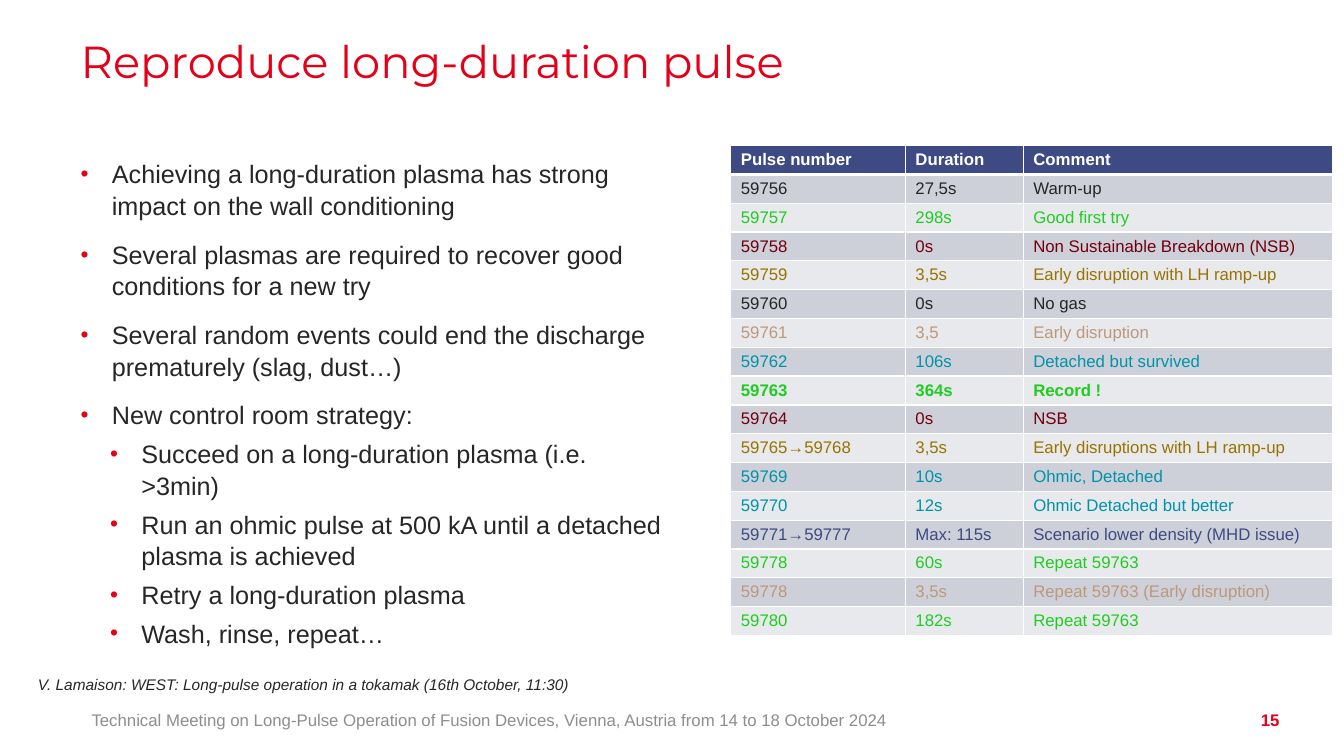
from typing import NamedTuple

import lxml.etree
import pptx
import pptx.dml.color
import pptx.enum.text
import pptx.oxml.ns
import pptx.util

Pt = pptx.util.Pt
Align = pptx.enum.text.PP_ALIGN
Anchor = pptx.enum.text.MSO_ANCHOR
Fit = pptx.enum.text.MSO_AUTO_SIZE
qn = pptx.oxml.ns.qn

RED, DARK, GREY, WHITE = "E50019", "262626", "8E8E8E", "FFFFFF"
NAVY, GREEN, WINE = "3E4A83", "1FCD20", "72000C"
GOLD, TAN, TEAL = "987300", "BD987A", "0093A7"
BANDS = ("CED0D9", "E8E9ED")


class Item(NamedTuple):
    text: str
    level: int = 0


class Pulse(NamedTuple):
    number: str
    time: str
    note: str
    color: str
    bold: bool = False


class Label(NamedTuple):
    text: str
    left: float
    top: float
    width: float
    height: float
    size: float
    color: str
    align: Align = Align.LEFT
    anchor: Anchor = Anchor.MIDDLE
    bold: bool = False
    italic: bool = False
    wrap: bool = True


ITEMS = [
    Item("Achieving a long-duration plasma has strong impact on the wall conditioning"),
    Item("Several plasmas are required to recover good conditions for a new try"),
    Item("Several random events could end the discharge prematurely (slag, dust…)"),
    Item("New control room strategy:"),
    Item("Succeed on a long-duration plasma (i.e. >3min)", 1),
    Item("Run an ohmic pulse at 500 kA until a detached plasma is achieved", 1),
    Item("Retry a long-duration plasma", 1),
    Item("Wash, rinse, repeat…", 1),
]

HEAD = Pulse("Pulse number", "Duration", "Comment", WHITE, True)
PULSES = [
    Pulse("59756", "27,5s", "Warm-up", DARK),
    Pulse("59757", "298s", "Good first try", GREEN),
    Pulse("59758", "0s", "Non Sustainable Breakdown (NSB)", WINE),
    Pulse("59759", "3,5s", "Early disruption with LH ramp-up", GOLD),
    Pulse("59760", "0s", "No gas", DARK),
    Pulse("59761", "3,5", "Early disruption", TAN),
    Pulse("59762", "106s", "Detached but survived", TEAL),
    Pulse("59763", "364s", "Record !", GREEN, True),
    Pulse("59764", "0s", "NSB", WINE),
    Pulse("59765→59768", "3,5s", "Early disruptions with LH ramp-up", GOLD),
    Pulse("59769", "10s", "Ohmic, Detached", TEAL),
    Pulse("59770", "12s", "Ohmic Detached but better", TEAL),
    Pulse("59771→59777", "Max: 115s", "Scenario lower density (MHD issue)", NAVY),
    Pulse("59778", "60s", "Repeat 59763", GREEN),
    Pulse("59778", "3,5s", "Repeat 59763 (Early disruption)", TAN),
    Pulse("59780", "182s", "Repeat 59763", GREEN),
]
COLS = (124.7, 84.2, 221)
ROW = 20.6

LABELS = [
    Label("Technical Meeting on Long-Pulse Operation of Fusion Devices, "
          "Vienna, Austria from 14 to 18 October 2024",
          58.3, 499.7, 696, 28.8, 12, GREY),
    Label("15", 866, 499.7, 55, 28.8, 12, RED, align=Align.RIGHT, bold=True),
    Label("V. Lamaison: WEST: Long-pulse operation in a tokamak (16th October, 11:30)",
          20, 479, 398, 21, 11, DARK, anchor=Anchor.TOP, italic=True, wrap=False),
]


def rgb(color: str) -> pptx.dml.color.RGBColor:
    return pptx.dml.color.RGBColor.from_string(color)


def add_run(para, text: str, size: float, color: str, bold: bool = False,
            italic: bool = False, face: str = "Arial") -> None:
    run = para.add_run()
    run.text = text
    font = run.font
    font.name, font.size = face, Pt(size)
    font.bold, font.italic = bold, italic
    font.color.rgb = rgb(color)


def place(shape, left: float, top: float, width: float, height: float) -> None:
    """Move a placeholder and clear its side insets."""
    shape.left, shape.top = Pt(left), Pt(top)
    shape.width, shape.height = Pt(width), Pt(height)
    frame = shape.text_frame
    frame.margin_left = frame.margin_right = 0
    frame.margin_top = frame.margin_bottom = Pt(3.6)
    frame.vertical_anchor = Anchor.TOP
    frame.auto_size = Fit.NONE
    frame.word_wrap = True


def add_bullet(para, left: float) -> None:
    props = para._p.get_or_add_pPr()
    props.set("marL", str(Pt(left)))
    props.set("indent", str(Pt(-22.3)))
    tint = lxml.etree.SubElement(props, qn("a:buClr"))
    lxml.etree.SubElement(tint, qn("a:srgbClr")).set("val", RED)
    lxml.etree.SubElement(props, qn("a:buSzPct")).set("val", "90000")
    lxml.etree.SubElement(props, qn("a:buFont")).set("typeface", "Arial")
    lxml.etree.SubElement(props, qn("a:buChar")).set("char", "•")


def add_list(shape, items: list[Item]) -> None:
    frame = shape.text_frame
    for i, item in enumerate(items):
        para = frame.add_paragraph() if i else frame.paragraphs[0]
        para.level = item.level
        add_bullet(para, 43.4 if item.level else 22.3)
        para.alignment = Align.LEFT
        para.line_spacing = 1.05
        para.space_before = Pt((5 if item.level else 12) if i else 0)
        para.space_after = Pt(0)
        add_run(para, item.text, 18, DARK)


def add_edges(cell, base: float) -> None:
    """Draw the white lines round a cell."""
    props = cell._tc.get_or_add_tcPr()
    for tag, width in (("lnL", 1), ("lnR", 1), ("lnT", 1), ("lnB", base)):
        line = lxml.etree.SubElement(props, qn(f"a:{tag}"))
        line.set("w", str(Pt(width)))
        fill = lxml.etree.SubElement(line, qn("a:solidFill"))
        lxml.etree.SubElement(fill, qn("a:srgbClr")).set("val", WHITE)


def add_pulses(slide, rows: list[Pulse]) -> None:
    table = slide.shapes.add_table(len(rows), len(COLS), Pt(522), Pt(104),
                                   Pt(sum(COLS)), Pt(ROW * len(rows))).table
    table.horz_banding = False
    for col, width in zip(table.columns, COLS):
        col.width = Pt(width)
    for i, pulse in enumerate(rows):
        table.rows[i].height = Pt(ROW)
        for cell, text in zip(table.rows[i].cells, pulse[:3]):
            add_edges(cell, 1 if i else 3)
            cell.fill.solid()
            cell.fill.fore_color.rgb = rgb(BANDS[(i - 1) % 2] if i else NAVY)
            cell.margin_top = Pt(3.4 if i else 1)
            cell.margin_bottom = Pt(1)
            cell.vertical_anchor = Anchor.TOP if i else Anchor.MIDDLE
            add_run(cell.text_frame.paragraphs[0], text, 12, pulse.color, pulse.bold)


def add_label(slide, label: Label) -> None:
    box = slide.shapes.add_textbox(Pt(label.left), Pt(label.top),
                                   Pt(label.width), Pt(label.height))
    frame = box.text_frame
    frame.word_wrap = label.wrap
    frame.vertical_anchor = label.anchor
    para = frame.paragraphs[0]
    para.alignment = label.align
    add_run(para, label.text, label.size, label.color, label.bold, label.italic)


def main() -> None:
    deck = pptx.Presentation()
    deck.slide_width, deck.slide_height = Pt(960), Pt(540)
    slide = deck.slides.add_slide(deck.slide_layouts[1])

    # Title
    title = slide.shapes.title
    place(title, 57.6, 24.5, 844.5, 68.4)
    para = title.text_frame.paragraphs[0]
    para.alignment = Align.LEFT
    para.line_spacing = 0.9
    add_run(para, "Reproduce long-duration pulse", 32, RED, face="Montserrat")

    # Bullet list
    body = slide.placeholders[1]
    place(body, 57.6, 108.7, 419.8, 357)
    add_list(body, ITEMS)

    # Pulse table
    add_pulses(slide, [HEAD, *PULSES])

    # Footer and credit line
    for label in LABELS:
        add_label(slide, label)

    deck.save("out.pptx")


if __name__ == "__main__":
    main()
